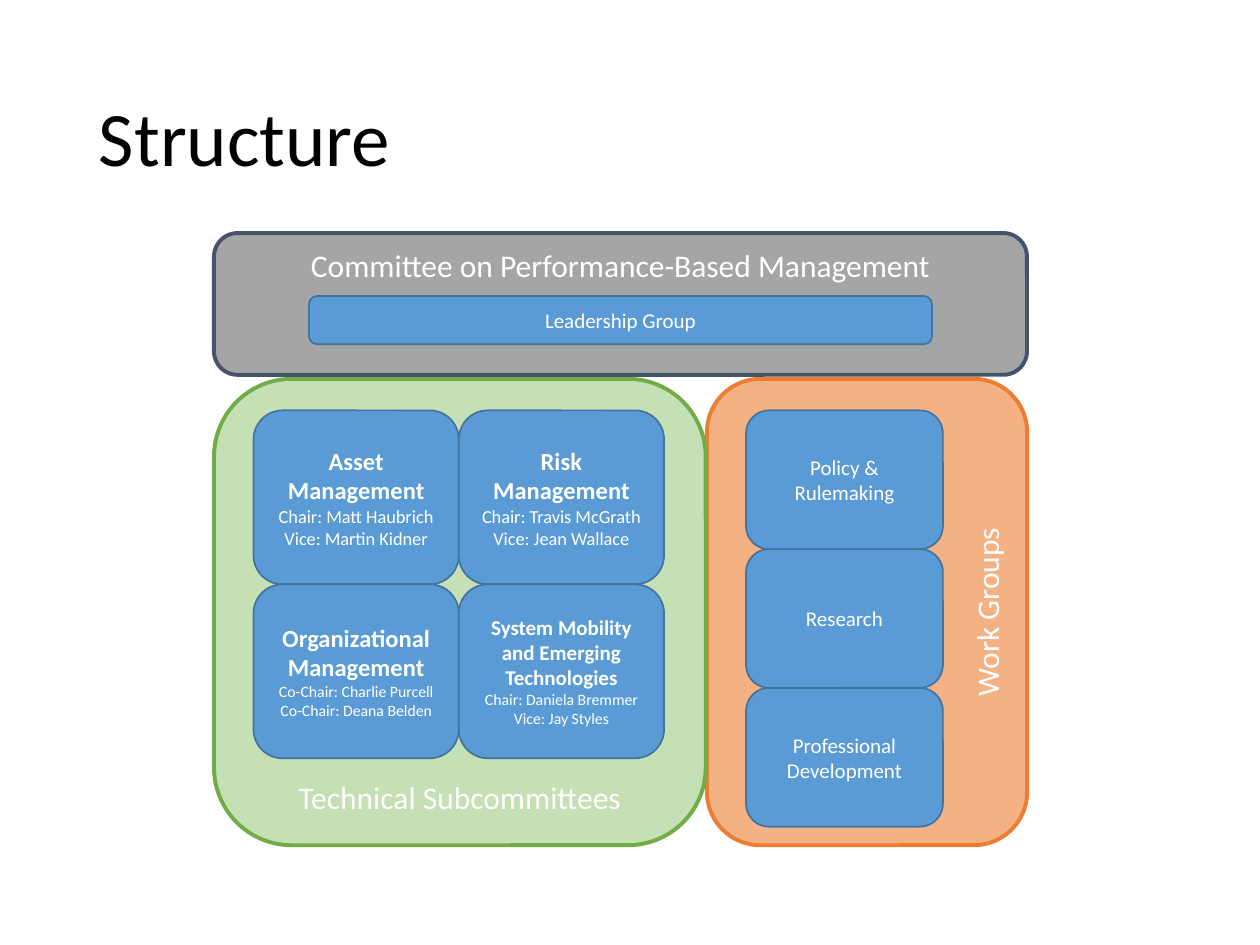
from pptx import Presentation
from pptx.dml.color import RGBColor
from pptx.enum.shapes import MSO_SHAPE as Shape
from pptx.enum.text import MSO_ANCHOR as Anchor, PP_ALIGN as Align
from pptx.util import Pt

FONT = "Calibri"
WHITE = "FFFFFF"
SUBCOMMITTEES = [
    ("Asset Management", 14, ["Chair: Matt Haubrich", "Vice: Martin Kidner"], 10.5),
    ("Risk Management", 14, ["Chair: Travis McGrath", "Vice: Jean Wallace"], 10.5),
    ("Organizational Management", 14,
     ["Co-Chair: Charlie Purcell", "Co-Chair: Deana Belden"], 9),
    ("System Mobility and Emerging Technologies", 12,
     ["Chair: Daniela Bremmer", "Vice: Jay Styles"], 9),
]
WORK_GROUPS = ["Policy & Rulemaking", "Research", "Professional Development"]


def color(value):
    """Turn a hex string into a colour."""
    return RGBColor.from_string(value)


def write(para, text, size=12, bold=False, ink=WHITE, align=Align.CENTER):
    """Write formatted text into a paragraph."""
    para.alignment = align
    span = para.add_run()
    span.text = text
    span.font.name = FONT
    span.font.size = Pt(size)
    span.font.bold = bold
    span.font.color.rgb = color(ink)


def add_box(page, left, top, width, height, fill="5B9BD5", line="43739E",
            weight=1, anchor=Anchor.MIDDLE):
    """Add a rounded box and return it."""
    box = page.shapes.add_shape(Shape.ROUNDED_RECTANGLE, Pt(left), Pt(top),
                                Pt(width), Pt(height))
    box.shadow.inherit = False
    box.fill.solid()
    box.fill.fore_color.rgb = color(fill)
    box.line.color.rgb = color(line)
    box.line.width = Pt(weight)
    box.text_frame.word_wrap = True
    box.text_frame.vertical_anchor = anchor
    return box


def add_panel(page, area, label, fill, line, anchor):
    """Add a large labelled panel and return it."""
    panel = add_box(page, *area, fill=fill, line=line, weight=2.25, anchor=anchor)
    write(panel.text_frame.paragraphs[0], label, size=18)
    return panel


def add_title(page, left, top, width, height):
    """Place the slide title."""
    title = page.shapes.add_textbox(Pt(left), Pt(top), Pt(width), Pt(height))
    title.text_frame.word_wrap = True
    title.text_frame.vertical_anchor = Anchor.MIDDLE
    para = title.text_frame.paragraphs[0]
    para.line_spacing = 0.9
    write(para, "Structure", size=44, ink="000000", align=Align.LEFT)


def add_work_groups(page, left, top, width, height):
    """Place the work groups panel with its stacked boxes."""
    panel = add_panel(page, (left, top, width, height), "Work Groups",
                      "F4B183", "ED7D31", Anchor.BOTTOM)
    panel.element.txBody.bodyPr.set("vert", "vert270")
    step = 79.3
    for row, name in enumerate(WORK_GROUPS):
        box = add_box(page, left + 22.3, top + 18 + row * step, 112.5, step)
        write(box.text_frame.paragraphs[0], name)


def add_subcommittees(page, left, top, width, height):
    """Place the technical subcommittees panel with its grid of boxes."""
    add_panel(page, (left, top, width, height), "Technical Subcommittees",
              "C5E0B4", "70AD47", Anchor.BOTTOM)
    cell_width, cell_height = 117.3, 99.4
    for index, (name, name_size, people, people_size) in enumerate(SUBCOMMITTEES):
        row, column = divmod(index, 2)
        box = add_box(page, left + 22.6 + column * cell_width,
                      top + 18 + row * cell_height, cell_width, cell_height)
        frame = box.text_frame
        write(frame.paragraphs[0], name, size=name_size, bold=True)
        for person in people:
            write(frame.add_paragraph(), person, size=people_size)


def add_committee(page, left, top, width, height):
    """Place the committee panel with its leadership bar."""
    add_panel(page, (left, top, width, height),
              "Committee on Performance-Based Management",
              "A5A5A5", "44546A", Anchor.TOP)
    bar_width = 356
    bar = add_box(page, left + (width - bar_width) / 2, top + 36, bar_width, 27.5)
    write(bar.text_frame.paragraphs[0], "Leadership Group")


def main():
    """Build the slide and save it."""
    deck = Presentation()
    deck.slide_width, deck.slide_height = Pt(720), Pt(540)
    page = deck.slides.add_slide(deck.slide_layouts[6])
    add_title(page, 49.5, 28.8, 621, 104.4)
    add_work_groups(page, 404, 216.5, 183, 266.5)
    add_subcommittees(page, 122.3, 216.5, 281, 266.5)
    add_committee(page, 122.3, 133.2, 464.6, 81)
    deck.save("out.pptx")


if __name__ == "__main__":
    main()
